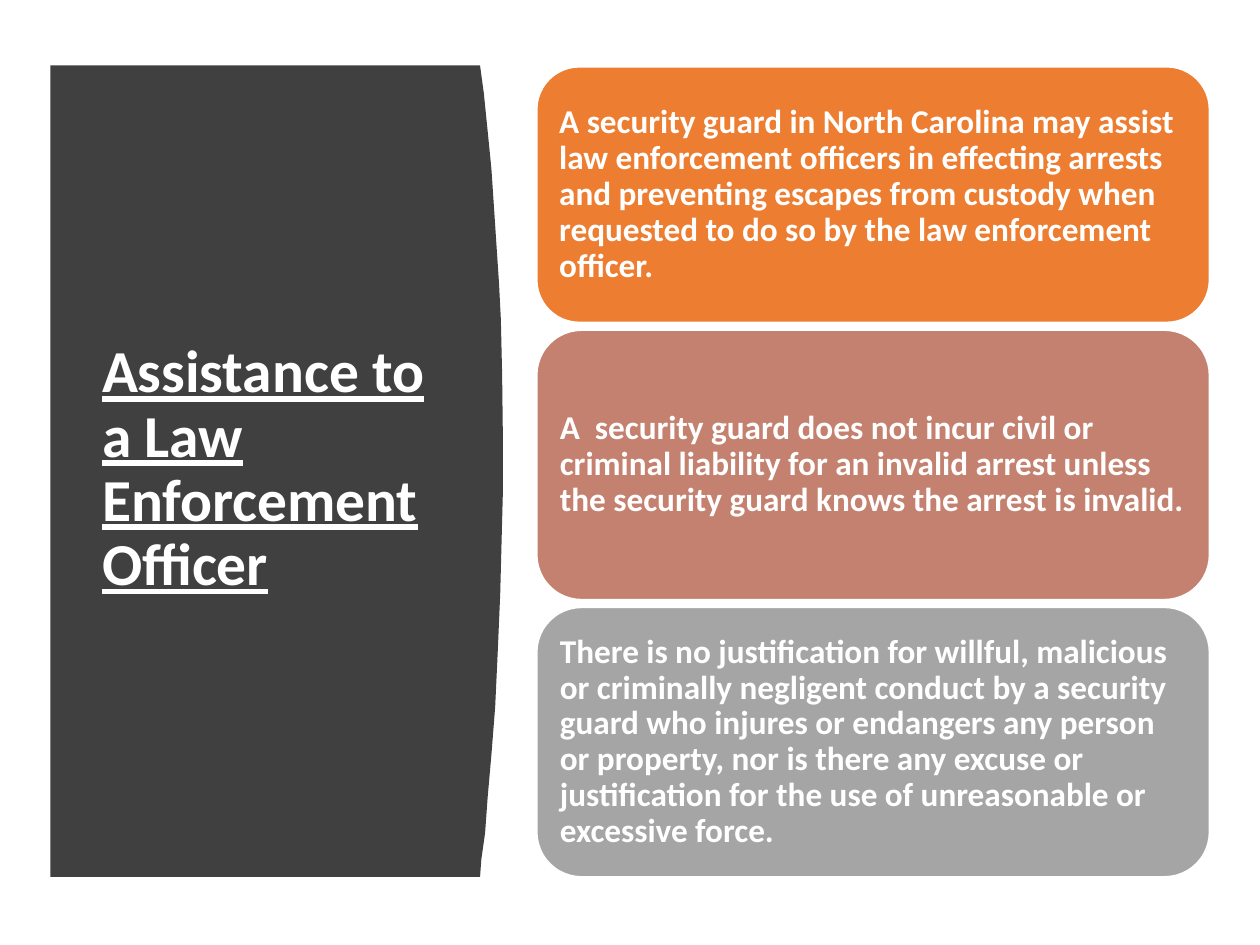
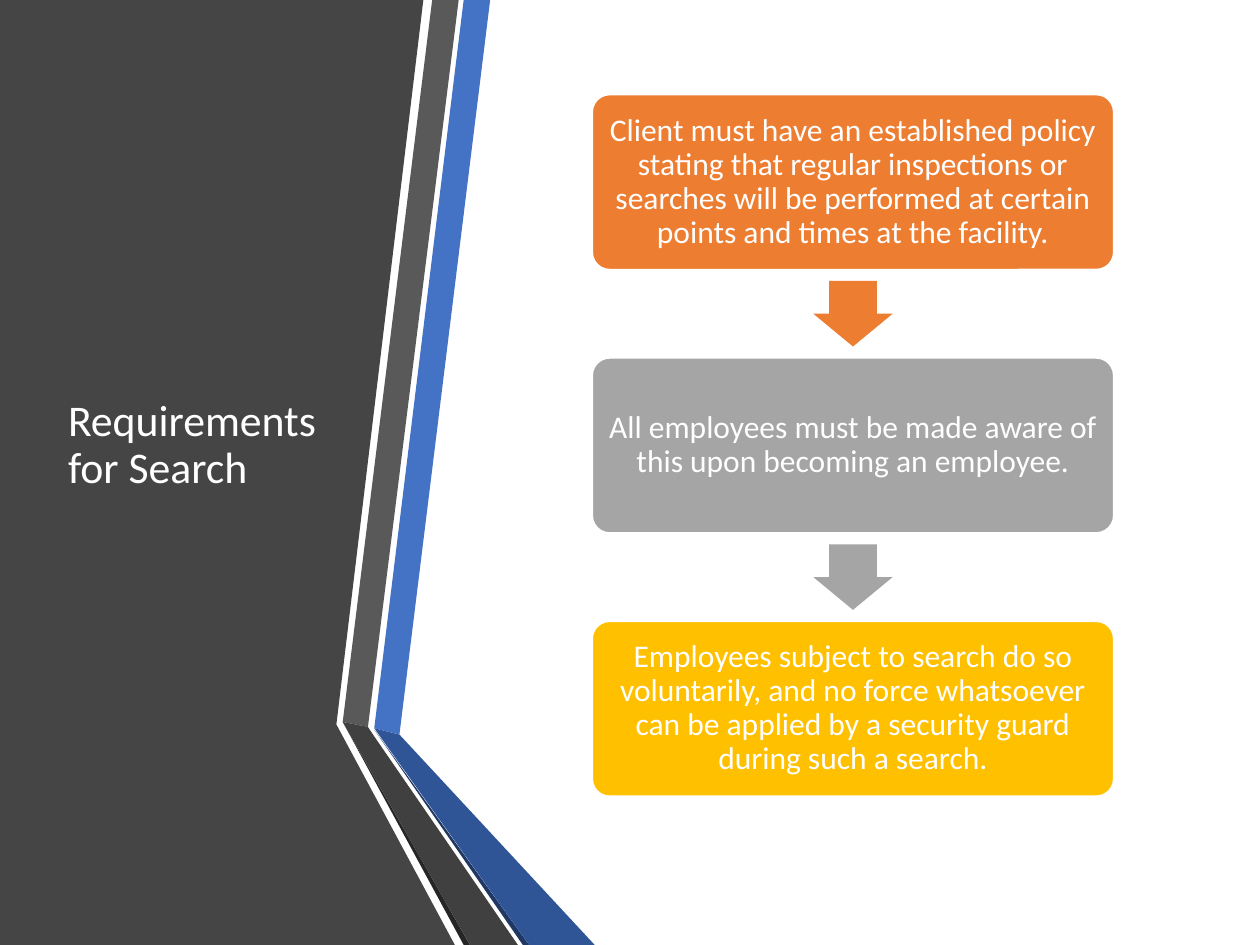
from dataclasses import dataclass

from pptx import Presentation
from pptx.dml.color import RGBColor
from pptx.enum import shapes, text
from pptx.util import Inches, Pt


@dataclass(frozen=True)
class Theme:
    font: str = "Calibri"
    white: str = "FFFFFF"
    orange: str = "ED7D31"
    rose: str = "C48170"
    gray: str = "A5A5A5"
    gold: str = "FFC000"
    charcoal: str = "404040"
    slate: str = "454545"
    band_gray: str = "595959"
    band_blue: str = "4472C4"
    fold_black: str = "262626"
    fold_navy: str = "203864"
    fold_blue: str = "2F5597"
    bold_title: int = 34
    plain_title: int = 25
    rule_text: int = 19
    step_text: int = 18


THEME = Theme()

ASSISTANCE_TITLE = "Assistance to a Law Enforcement Officer"
ASSISTANCE_RULES = [  # text, fill, height
    ("A security guard in North Carolina may assist law enforcement officers in effecting "
     "arrests and preventing escapes from custody when requested to do so by the law "
     "enforcement officer.", THEME.orange, 2.03),
    ("A  security guard does not incur civil or criminal liability for an invalid arrest "
     "unless the security guard knows the arrest is invalid.", THEME.rose, 2.14),
    ("There is no justification for willful, malicious or criminally negligent conduct by a "
     "security guard who injures or endangers any person or property, nor is there any excuse "
     "or justification for the use of unreasonable or excessive force.", THEME.gray, 2.14),
]

SEARCH_TITLE = "Requirements for Search"
SEARCH_STEPS = [  # text, fill
    ("Client must have an established policy stating that regular inspections or searches "
     "will be performed at certain points and times at the facility.", THEME.orange),
    ("All employees must be made aware of this upon becoming an employee.", THEME.gray),
    ("Employees subject to search do so voluntarily, and no force whatsoever can be applied "
     "by a security guard during such a search.", THEME.gold),
]

CURVED_PANEL = [
    (0.4, 0.52), (3.81, 0.52), (3.84, 0.74), (3.87, 1.04), (3.9, 1.34), (3.92, 1.64),
    (3.94, 1.94), (3.96, 2.24), (3.975, 2.53), (3.985, 2.97), (3.99, 3.39), (3.99, 3.94),
    (3.98, 4.33), (3.97, 4.71), (3.95, 5.18), (3.93, 5.61), (3.9, 5.99), (3.87, 6.33),
    (3.85, 6.61), (3.82, 6.82), (3.81, 6.96), (0.4, 6.96),
]
FOLDED_PANEL = [  # fill, outline
    (THEME.slate, [(0, 0), (3.36, 0), (2.67, 5.75), (3.61, 7.5), (0, 7.5)]),
    (THEME.band_blue, [(2.97, 5.78), (3.17, 5.83), (3.89, 0), (3.68, 0)]),
    (THEME.band_gray, [(3.64, 0), (3.43, 0), (2.72, 5.73), (2.92, 5.77)]),
    (THEME.fold_black, [(2.72, 5.73), (3.68, 7.5), (3.73, 7.5)]),
    (THEME.fold_navy, [(2.97, 5.79), (4.15, 7.5), (4.2, 7.5)]),
    (THEME.fold_blue, [(2.97, 5.78), (4.2, 7.5), (4.72, 7.5), (3.17, 5.83)]),
    (THEME.charcoal, [(4.11, 7.5), (2.96, 5.83), (2.92, 5.77), (2.72, 5.73), (3.73, 7.5)]),
]


def write_text(shape, words, size, align=text.PP_ALIGN.LEFT, bold=False, underline=False,
               inset=None):
    frame = shape.text_frame
    frame.word_wrap = True
    frame.auto_size = text.MSO_AUTO_SIZE.NONE
    frame.vertical_anchor = text.MSO_ANCHOR.MIDDLE
    if inset is not None:
        frame.margin_left = frame.margin_right = Inches(inset)
        frame.margin_top = frame.margin_bottom = Inches(inset)
    paragraph = frame.paragraphs[0]
    paragraph.alignment = align
    paragraph.line_spacing = 0.9
    run = paragraph.add_run()
    run.text = words
    run.font.name = THEME.font
    run.font.size = Pt(size)
    run.font.bold = bold
    run.font.underline = underline
    run.font.color.rgb = RGBColor.from_string(THEME.white)


def paint(shape, fill, outlined=False):
    shape.shadow.inherit = False
    shape.fill.solid()
    shape.fill.fore_color.rgb = RGBColor.from_string(fill)
    if outlined:
        shape.line.color.rgb = RGBColor.from_string(THEME.white)
        shape.line.width = Pt(1)
    else:
        shape.line.fill.background()


def add_preset(slide, kind, box, fill, adjustments=(), outlined=False):
    shape = slide.shapes.add_shape(kind, *map(Inches, box))
    for index, value in enumerate(adjustments):
        shape.adjustments[index] = value
    paint(shape, fill, outlined)
    return shape


def add_outline(slide, points, fill):
    start, *rest = [(Inches(x), Inches(y)) for x, y in points]
    builder = slide.shapes.build_freeform(*start)
    builder.add_line_segments(rest, close=True)
    paint(builder.convert_to_shape(), fill)


def place_title(slide, words, box, size, **style):
    """Fill the title placeholder and bring it in front of the panel."""
    title = slide.shapes.title
    title.left, title.top, title.width, title.height = map(Inches, box)
    write_text(title, words, size, **style)
    title.element.getparent().append(title.element)


def build_assistance(slide):
    add_outline(slide, CURVED_PANEL, THEME.charcoal)
    place_title(slide, ASSISTANCE_TITLE, (0.71, 1.11, 2.8, 5.24), THEME.bold_title,
                bold=True, underline=True)
    left, top, width, gap = 4.26, 0.53, 5.34, 0.06
    for words, fill, height in ASSISTANCE_RULES:
        rule = add_preset(slide, shapes.MSO_SHAPE.ROUNDED_RECTANGLE,
                          (left, top, width, height), fill, outlined=True)
        write_text(rule, words, THEME.rule_text, bold=True, inset=0.08)
        top += height + gap


def build_search(slide):
    for fill, points in FOLDED_PANEL:
        add_outline(slide, points, fill)
    place_title(slide, SEARCH_TITLE, (0.44, 0.75, 2.28, 5.58), THEME.plain_title)
    left, first_top, width, height, pitch = 4.7, 0.75, 4.14, 1.39, 2.09
    arrow_width, arrow_height = 0.63, 0.52
    arrow_left = left + (width - arrow_width) / 2
    arrow_offset = height + (pitch - height - arrow_height) / 2
    for index, (words, fill) in enumerate(SEARCH_STEPS):
        top = first_top + index * pitch
        step = add_preset(slide, shapes.MSO_SHAPE.ROUNDED_RECTANGLE,
                          (left, top, width, height), fill, [0.1], outlined=True)
        write_text(step, words, THEME.step_text, align=text.PP_ALIGN.CENTER, inset=0.07)
        if index < len(SEARCH_STEPS) - 1:
            add_preset(slide, shapes.MSO_SHAPE.DOWN_ARROW,
                       (arrow_left, top + arrow_offset, arrow_width, arrow_height),
                       fill, [0.6, 0.5])


def main():
    presentation = Presentation()
    presentation.slide_width, presentation.slide_height = Inches(10), Inches(7.5)
    title_only = presentation.slide_layouts[5]
    for build in (build_assistance, build_search):
        build(presentation.slides.add_slide(title_only))
    presentation.save("out.pptx")


if __name__ == "__main__":
    main()
